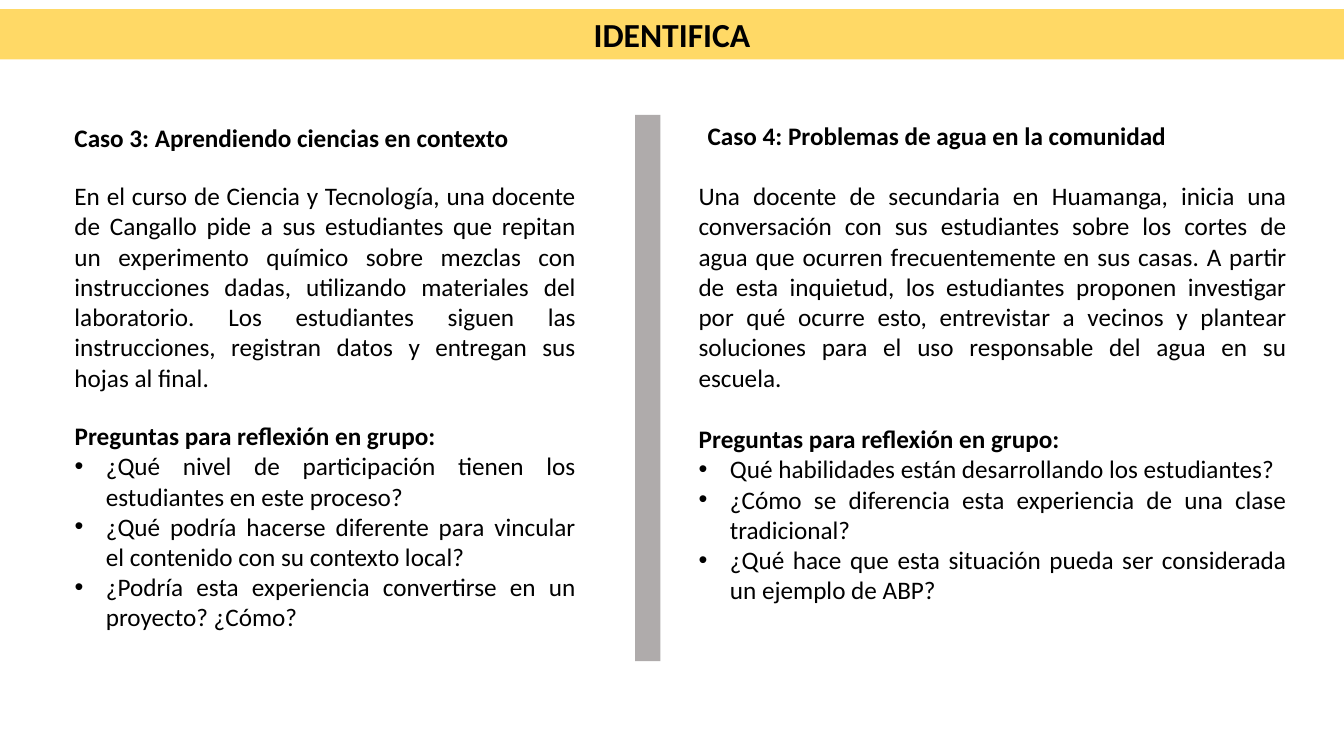
from lxml import etree
from pptx import Presentation
from pptx.dml.color import RGBColor
from pptx.enum.shapes import MSO_SHAPE
from pptx.enum.text import MSO_ANCHOR, MSO_AUTO_SIZE, PP_ALIGN
from pptx.oxml.ns import qn
from pptx.util import Inches, Pt

RECT = MSO_SHAPE.RECTANGLE
TOP, MIDDLE = MSO_ANCHOR.TOP, MSO_ANCHOR.MIDDLE
FIXED, GROW = MSO_AUTO_SIZE.NONE, MSO_AUTO_SIZE.SHAPE_TO_FIT_TEXT
LEFT, CENTER, JUSTIFY = PP_ALIGN.LEFT, PP_ALIGN.CENTER, PP_ALIGN.JUSTIFY
TWO_CONTENT = 3
INDENT = Inches(0.31)


def paint(fill, color):
    fill.solid()
    fill.fore_color.rgb = RGBColor.from_string(color)


def write(par, text, size=18, bold=False, align=LEFT, color="000000", font="Calibri"):
    par.alignment = align
    par.space_before = Pt(0)
    run = par.add_run()
    run.text = text
    run.font.name = font
    run.font.size = Pt(size)
    run.font.bold = bold
    paint(run.font.fill, color)


def mark(par, bullet):
    """Give the paragraph a hanging bullet, or none at all."""
    props = par._p.get_or_add_pPr()
    props.set("marL", str(INDENT if bullet else 0))
    props.set("indent", str(-INDENT if bullet else 0))
    if bullet:
        etree.SubElement(props, qn("a:buFont")).set("typeface", "Arial")
        etree.SubElement(props, qn("a:buChar")).set("char", "•")
    else:
        etree.SubElement(props, qn("a:buNone"))


class Page:
    band, bar = "FFD966", "AFABAB"

    def __init__(self, deck):
        self.slide = deck.slides.add_slide(deck.slide_layouts[TWO_CONTENT])
        self.shapes = self.slide.shapes

    def place(self, shape, box):
        shape.left, shape.top, shape.width, shape.height = map(Inches, box)

    def frame(self, shape, anchor=TOP, fit=GROW):
        frame = shape.text_frame
        frame.word_wrap = True
        frame.auto_size = fit
        frame.vertical_anchor = anchor
        return frame

    def title(self, text, box):
        shape = self.shapes.title
        self.place(shape, box)
        paint(shape.fill, self.band)
        frame = self.frame(shape, MIDDLE, FIXED)
        write(frame.paragraphs[0], text, size=24, bold=True, align=CENTER)

    def text(self, text, box, **style):
        shape = self.shapes.add_textbox(*map(Inches, box))
        write(self.frame(shape).paragraphs[0], text, **style)

    def list(self, slot, head, items, box):
        shape = self.slide.placeholders[slot]
        self.place(shape, box)
        frame = self.frame(shape, fit=FIXED)
        first = frame.paragraphs[0]
        write(first, head, bold=True)
        mark(first, False)
        for item in items:
            par = frame.add_paragraph()
            write(par, item, align=JUSTIFY)
            mark(par, True)

    def block(self, box):
        shape = self.shapes.add_shape(RECT, *map(Inches, box))
        shape.shadow.inherit = False
        paint(shape.fill, self.bar)
        shape.line.fill.background()


# Each case: heading and its box, story, questions, column left and width, list top and height
CASES = [
    ("Caso 3: Aprendiendo ciencias en contexto", (0.64, 1.16, 5.3, 0.4),
     "En el curso de Ciencia y Tecnología, una docente de Cangallo pide a sus "
     "estudiantes que repitan un experimento químico sobre mezclas con instrucciones "
     "dadas, utilizando materiales del laboratorio. Los estudiantes siguen las "
     "instrucciones, registran datos y entregan sus hojas al final.",
     ["¿Qué nivel de participación tienen los estudiantes en este proceso?",
      "¿Qué podría hacerse diferente para vincular el contenido con su contexto local?",
      "¿Podría esta experiencia convertirse en un proyecto? ¿Cómo?"],
     0.64, 5.17, 4.12, 2.22),
    ("Caso 4: Problemas de agua en la comunidad", (6.92, 1.14, 5.23, 0.4),
     "Una docente de secundaria en Huamanga, inicia una conversación con sus "
     "estudiantes sobre los cortes de agua que ocurren frecuentemente en sus casas. "
     "A partir de esta inquietud, los estudiantes proponen investigar por qué ocurre "
     "esto, entrevistar a vecinos y plantear soluciones para el uso responsable del "
     "agua en su escuela.",
     ["Qué habilidades están desarrollando los estudiantes?",
      "¿Cómo se diferencia esta experiencia de una clase tradicional?",
      "¿Qué hace que esta situación pueda ser considerada un ejemplo de ABP?"],
     6.83, 6.03, 4.15, 1.92),
]


def main():
    deck = Presentation()
    deck.slide_width, deck.slide_height = Inches(13.33), Inches(7.5)
    page = Page(deck)

    # Title band
    page.title("IDENTIFICA", (0, 0.09, 13.33, 0.5))

    # Two case columns
    for slot, (head, spot, story, asks, left, width, top, height) in enumerate(CASES, 1):
        page.text(head, spot, bold=True)
        page.text(story, (left, 1.74, width, 2.22), align=JUSTIFY)
        page.list(slot, "Preguntas para reflexión en grupo:", asks,
                  (left, top, width, height))

    # Divider between the columns
    page.block((6.3, 1.14, 0.25, 5.42))

    deck.save("out.pptx")


if __name__ == "__main__":
    main()
